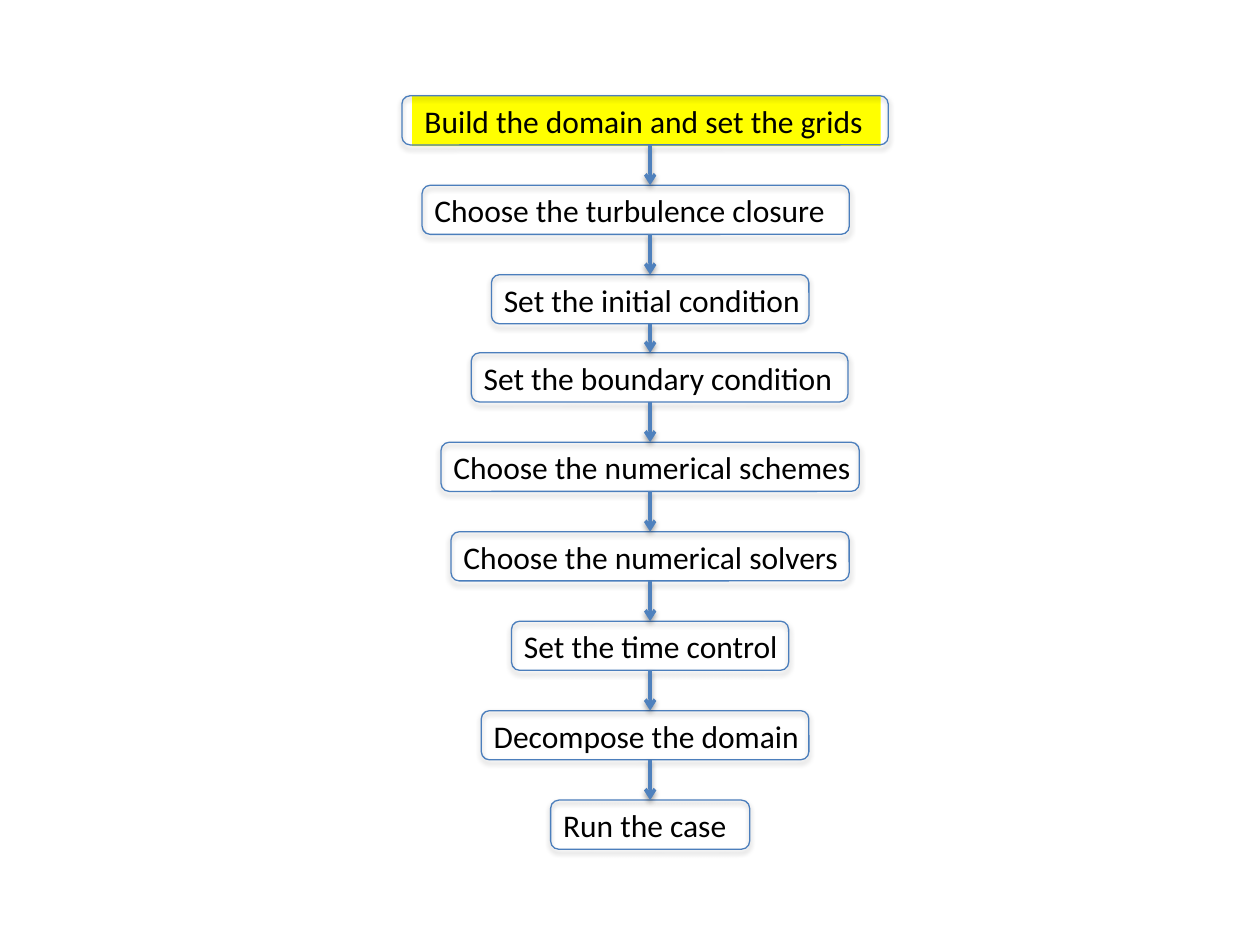
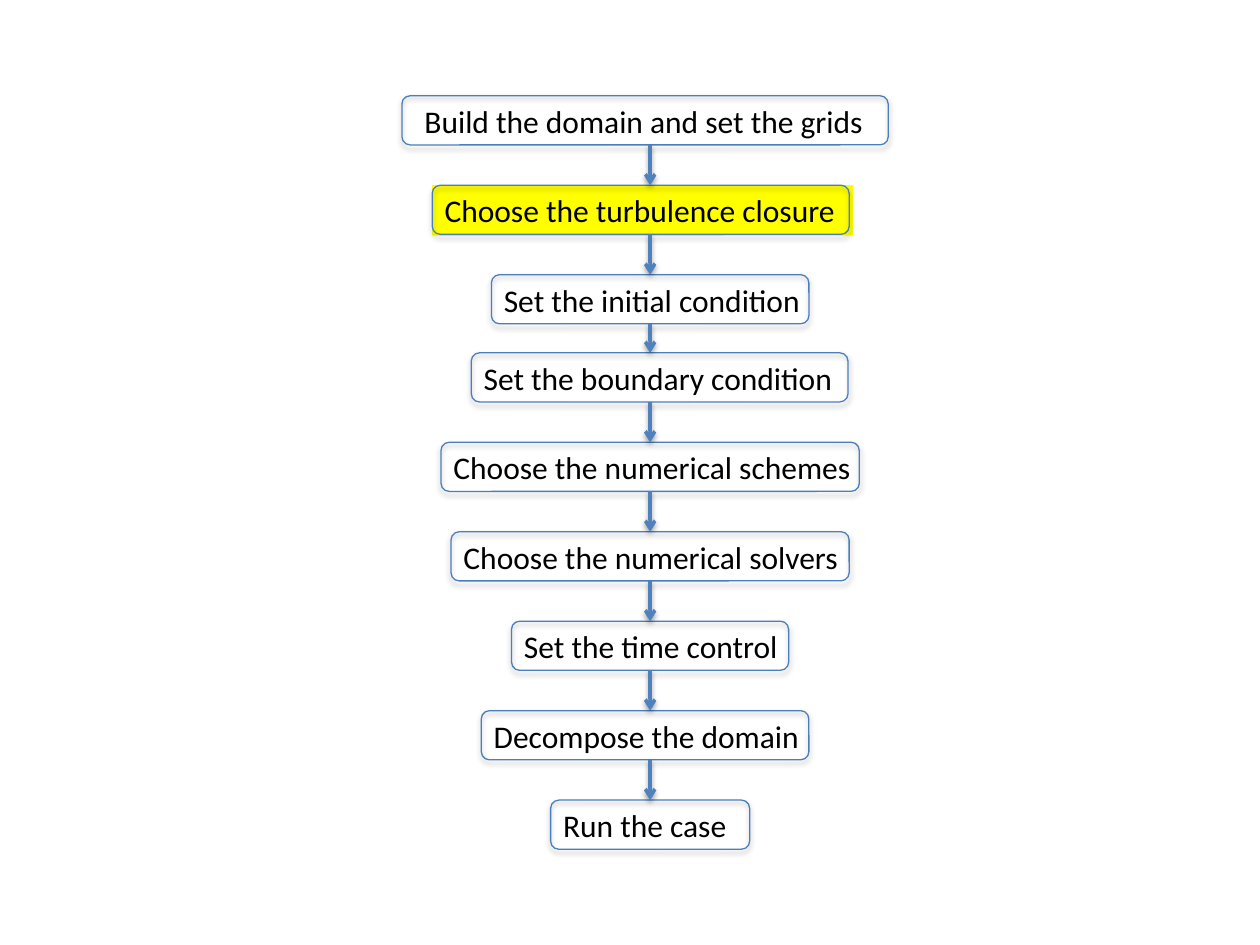
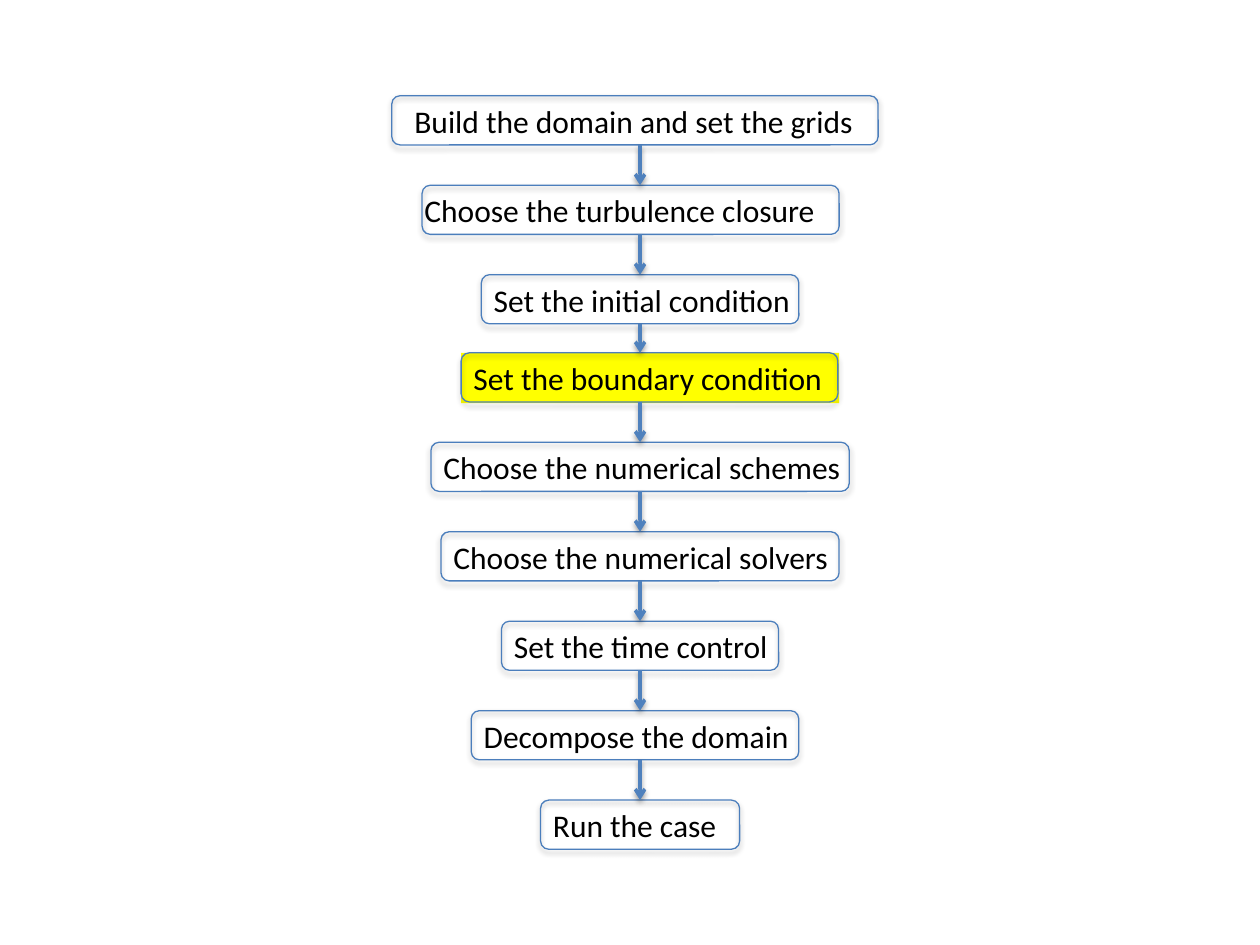
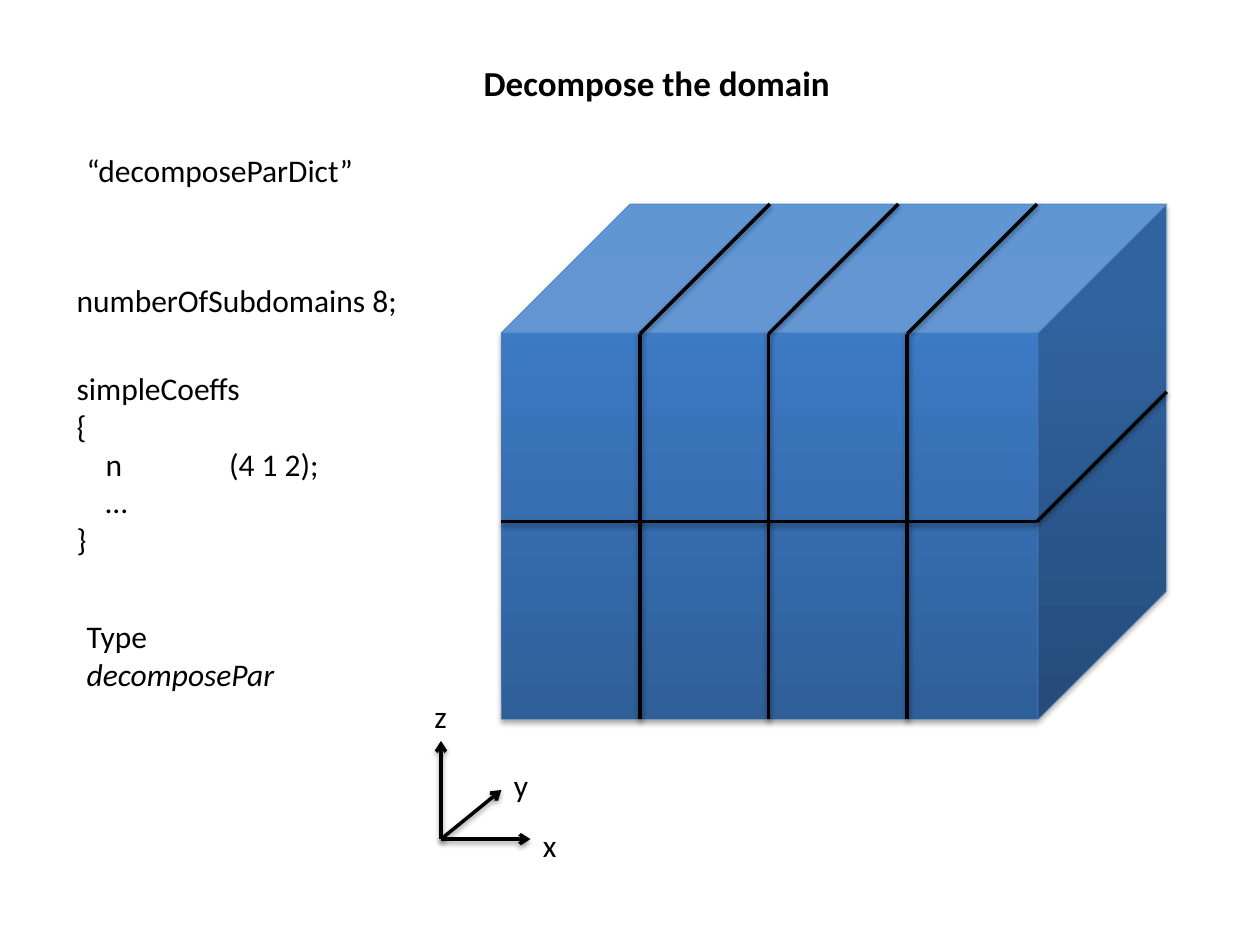
"""Builds four slides: a simulation workflow (three stages) and domain decomposition."""
import copy
import dataclasses
import itertools
import typing

import lxml.etree
import pptx
import pptx.dml.color
import pptx.enum.dml
import pptx.enum.shapes
import pptx.enum.text
import pptx.oxml.ns
import pptx.util

Inches = pptx.util.Inches
Pt = pptx.util.Pt
RGBColor = pptx.dml.color.RGBColor
qn = pptx.oxml.ns.qn

# Shared style
BLACK = RGBColor(0x00, 0x00, 0x00)
YELLOW = RGBColor(0xFF, 0xFF, 0x00)
FRAME_BLUE = RGBColor(0x4B, 0x7E, 0xBC)
ARROW_BLUE = RGBColor(0x4F, 0x81, 0xBD)
CUBE_GRADIENT = (
    (0, RGBColor(0x2F, 0x5F, 0x99)),
    (0.8, RGBColor(0x3D, 0x7C, 0xC7)),
    (1, RGBColor(0x3A, 0x7C, 0xCB)),
)
FONT = "Calibri"
TEXT_HEIGHT = 0.4

# Flow chart grid
FLOW_TOP = 0.76
STEP_PITCH = 0.71
FRAME_HEIGHT = 0.39
AXIS = 5.16
RAISED_FROM = 3  # steps from this one on sit a little higher
RAISE = 0.09


@dataclasses.dataclass(frozen=True)
class Step:
    label: str
    text_left: float
    text_width: float
    frame_left: float
    frame_width: float


@dataclasses.dataclass(frozen=True)
class Flow:
    highlighted: int
    closure: Step
    shift: float = 0


@dataclasses.dataclass(frozen=True)
class Label:
    text: str
    left: float
    top: float
    width: float
    height: float = TEXT_HEIGHT
    style: dict = dataclasses.field(default_factory=dict)


CLOSURE = Step("Choose the turbulence closure", 3.35, 3.34, 3.35, 3.39)
NARROW_CLOSURE = dataclasses.replace(CLOSURE, frame_left=3.43, frame_width=3.31)
STEPS = [
    Step("Build the domain and set the grids", 3.27, 3.72, 3.19, 3.86),
    CLOSURE,
    Step("Set the initial condition", 3.9, 2.58, 3.9, 2.52),
    Step("Set the boundary condition", 3.74, 3, 3.74, 2.99),
    Step("Choose the numerical schemes", 3.5, 3.39, 3.5, 3.32),
    Step("Choose the numerical solvers", 3.58, 3.22, 3.58, 3.16),
    Step("Set the time control", 4.06, 2.25, 4.06, 2.2),
    Step("Decompose the domain", 3.82, 2.65, 3.82, 2.6),
    Step("Run the case", 4.37, 1.51, 4.37, 1.58),
]
FLOWS = [
    Flow(0, CLOSURE),
    Flow(1, dataclasses.replace(NARROW_CLOSURE, text_left=3.43)),
    Flow(3, NARROW_CLOSURE, shift=-0.08),
]

# Decomposition slide
LABELS = [
    Label("Decompose the domain", 3.74, 0.44, 2.97, 0.44, {"size": 20, "bold": True}),
    Label("“decomposeParDict”", 0.59, 1.15, 2.34),
    Label("simpleCoeffs\n{\n\tn\t(4 1 2);\n\t…\n}", 0.51, 2.88, 2.14, 1.62,
          {"tabs": (0.23, 1.21), "wrap": True}),
    Label("numberOfSubdomains 8;", 0.51, 2.18, 2.77),
    Label("x", 4.21, 6.51, 0.31),
    Label("y", 3.98, 6.03, 0.32),
    Label("z", 3.35, 5.48, 0.3),
    Label("Type\ndecomposePar", 0.59, 4.85, 1.77, 0.71, {"italic_lines": (1,)}),
]
CUBE_LEFT, CUBE_TOP, CUBE_WIDTH, CUBE_HEIGHT = 3.98, 1.62, 5.28, 4.09
CUBE_DEPTH = 1.03
FRONT_TOP = CUBE_TOP + CUBE_DEPTH
FRONT_RIGHT = 8.23
CUBE_BOTTOM = CUBE_TOP + CUBE_HEIGHT
CUTS_X = (5.08, 6.1, 7.2)
CUT_Z = 4.14
ORIGIN = (3.5, 6.66)
AXIS_TIPS = ((3.5, 5.88), (4.21, 6.66), (3.98, 6.27))


def add_alpha(color: typing.Any, percent: int) -> None:
    lxml.etree.SubElement(color, qn("a:alpha"), val=str(percent * 1000))


def add_shadow(shape: typing.Any, distance: float, percent: int) -> None:
    """Gives a shape or connector a soft shadow below it."""
    effects = lxml.etree.SubElement(shape._element.spPr, qn("a:effectLst"))
    shadow = lxml.etree.SubElement(
        effects, qn("a:outerShdw"), blurRad=str(Pt(3.1)), dist=str(Pt(distance)),
        dir="5400000", rotWithShape="0")
    add_alpha(lxml.etree.SubElement(shadow, qn("a:srgbClr"), val=str(BLACK)), percent)


def add_text(page: typing.Any, text: str, left: float, top: float, width: float,
             height: float = TEXT_HEIGHT, *, size: float = 18, bold: bool = False,
             italic_lines: tuple = (), tabs: tuple = (), wrap: bool = False,
             fill: typing.Optional[RGBColor] = None) -> None:
    box = page.shapes.add_textbox(Inches(left), Inches(top), Inches(width), Inches(height))
    if fill is not None:
        box.fill.solid()
        box.fill.fore_color.rgb = fill
    frame = box.text_frame
    frame.word_wrap = wrap
    frame.auto_size = pptx.enum.text.MSO_AUTO_SIZE.SHAPE_TO_FIT_TEXT
    for index, line in enumerate(text.split("\n")):
        para = frame.add_paragraph() if index else frame.paragraphs[0]
        span = para.add_run()
        span.text = line
        span.font.name = FONT
        span.font.size = Pt(size)
        span.font.bold = bold
        span.font.italic = index in italic_lines
        span.font.color.rgb = BLACK
        if tabs:
            stops = lxml.etree.SubElement(para._p.get_or_add_pPr(), qn("a:tabLst"))
            for stop in tabs:
                lxml.etree.SubElement(stops, qn("a:tab"), pos=str(Inches(stop)), algn="l")


def add_outlined(page: typing.Any, kind: typing.Any, left: float, top: float,
                 width: float, height: float) -> typing.Any:
    """Adds an unfilled shape with the blue outline and shadow."""
    shape = page.shapes.add_shape(
        kind, Inches(left), Inches(top), Inches(width), Inches(height))
    shape.fill.background()
    shape.line.color.rgb = FRAME_BLUE
    shape.line.width = Pt(0.75)
    add_shadow(shape, 1.8, 35)
    return shape


def add_line(page: typing.Any, start: tuple, end: tuple, color: RGBColor = BLACK,
             arrow: bool = False) -> typing.Any:
    line = page.shapes.add_connector(
        pptx.enum.shapes.MSO_CONNECTOR.STRAIGHT, *(Inches(value) for value in start + end))
    line.line.color.rgb = color
    line.line.width = Pt(2)
    if arrow:
        lxml.etree.SubElement(line.line._get_or_add_ln(), qn("a:tailEnd"), type="arrow")
    add_shadow(line, 1.6, 38)
    return line


def step_top(index: int) -> float:
    return FLOW_TOP + STEP_PITCH * index - (RAISE if index >= RAISED_FROM else 0)


def is_centred(step: Step) -> bool:
    return abs(step.frame_left + step.frame_width / 2 - AXIS) < 0.001


def draw_flow(page: typing.Any, flow: Flow) -> None:
    steps = [flow.closure if step is CLOSURE else step for step in STEPS]
    for index, step in enumerate(steps):
        add_text(page, step.label, step.text_left + flow.shift, step_top(index),
                 step.text_width, fill=YELLOW if index == flow.highlighted else None)
    frames = [
        add_outlined(page, pptx.enum.shapes.MSO_SHAPE.ROUNDED_RECTANGLE,
                     step.frame_left + flow.shift, step_top(index),
                     step.frame_width, FRAME_HEIGHT)
        for index, step in enumerate(steps)
    ]
    # Arrows run down one axis and join the frames that are centred on it
    center = AXIS + flow.shift
    for above, below in itertools.pairwise(range(len(steps))):
        arrow = add_line(page, (center, step_top(above) + FRAME_HEIGHT),
                         (center, step_top(below)), ARROW_BLUE, arrow=True)
        if is_centred(steps[above]):
            arrow.begin_connect(frames[above], 2)
        if is_centred(steps[below]):
            arrow.end_connect(frames[below], 0)


def draw_cube(page: typing.Any) -> None:
    cube = add_outlined(page, pptx.enum.shapes.MSO_SHAPE.CUBE,
                        CUBE_LEFT, CUBE_TOP, CUBE_WIDTH, CUBE_HEIGHT)
    add_alpha(cube.line._get_or_add_ln().find(".//" + qn("a:srgbClr")), 45)
    cube.fill.gradient()
    cube.fill.gradient_angle = 90
    stop_list = cube._element.spPr.find(".//" + qn("a:gsLst"))
    stop_list.append(copy.deepcopy(stop_list[-1]))
    for stop, (position, color) in zip(cube.fill.gradient_stops, CUBE_GRADIENT):
        stop.position = position
        stop.color.rgb = color


def draw_decomposition(page: typing.Any) -> None:
    draw_cube(page)
    # Cuts along x, on the front and top faces
    for x in CUTS_X:
        add_line(page, (x, FRONT_TOP), (x, CUBE_BOTTOM))
        add_line(page, (x, FRONT_TOP), (x + CUBE_DEPTH, CUBE_TOP))
    # Cut along z, on the front and right faces
    add_line(page, (CUBE_LEFT, CUT_Z), (FRONT_RIGHT, CUT_Z))
    add_line(page, (FRONT_RIGHT, CUT_Z), (FRONT_RIGHT + CUBE_DEPTH, CUT_Z - CUBE_DEPTH))
    # Coordinate axes
    for tip in AXIS_TIPS:
        add_line(page, ORIGIN, tip, arrow=True)
    for label in LABELS:
        add_text(page, label.text, label.left, label.top, label.width, label.height,
                 **label.style)


def main() -> None:
    deck = pptx.Presentation()
    deck.slide_width = Inches(10)
    deck.slide_height = Inches(7.5)
    blank = deck.slide_layouts[6]
    for flow in FLOWS:
        draw_flow(deck.slides.add_slide(blank), flow)
    draw_decomposition(deck.slides.add_slide(blank))
    deck.save("out.pptx")


if __name__ == "__main__":
    main()
